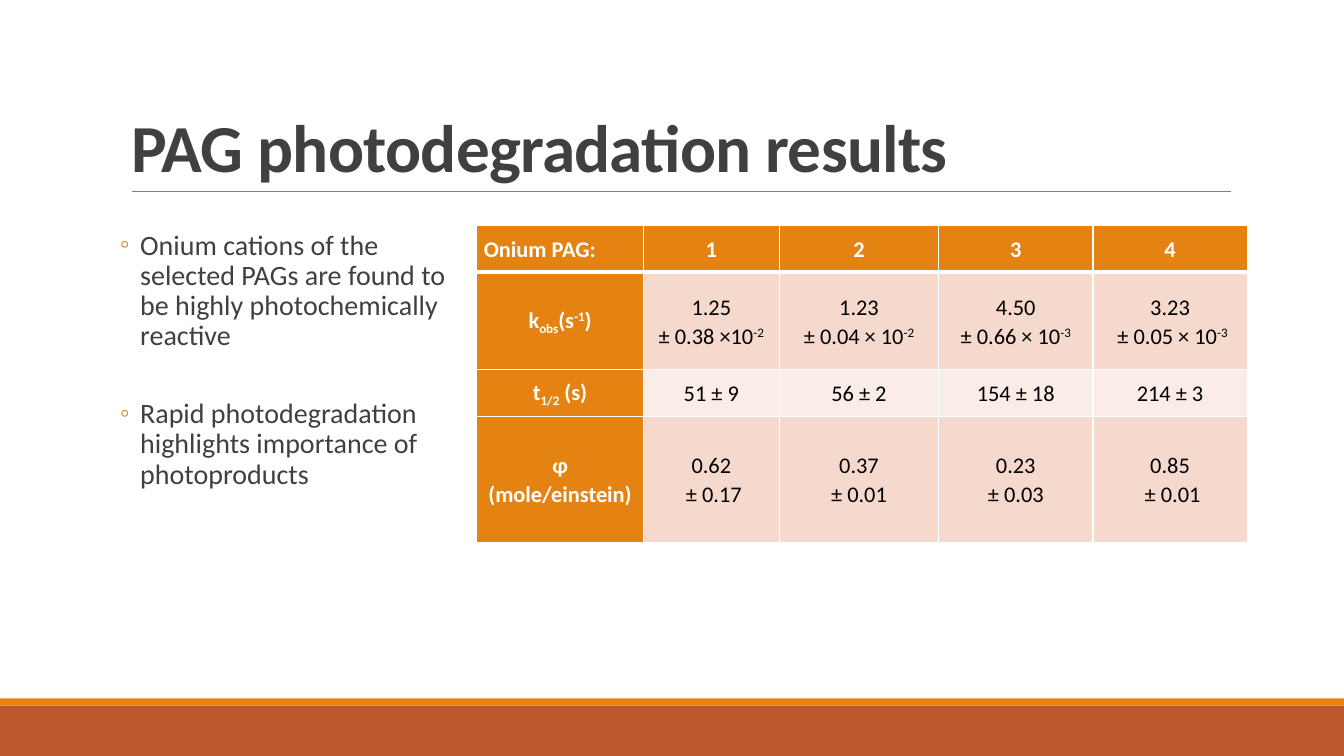
"""Builds the slide of PAG photodegradation results."""
from dataclasses import dataclass

from lxml import etree
from pptx import Presentation
from pptx import util as u
from pptx.dml.color import RGBColor
from pptx.enum import shapes, text
from pptx.oxml.ns import qn


@dataclass(frozen=True)
class Theme:
    font: str = "Calibri"
    title_size: int = 48
    body_size: int = 20
    table_size: int = 16
    ink: str = "404040"
    black: str = "000000"
    white: str = "FFFFFF"
    orange: str = "E48312"
    rust: str = "BD582C"
    rule: str = "808080"
    bands: tuple[str, str] = ("F5D9CC", "FAEDE7")


@dataclass(frozen=True)
class Band:
    top: float
    height: float
    color: str


@dataclass(frozen=True)
class Row:
    height: float
    cells: tuple[str, ...]


T = Theme()
BASELINES = {"_": "-25000", "^": "30000"}
FOOTER = (Band(7, 0.5, T.rust), Band(6.93, 0.07, T.orange))
BULLETS = (
    "Onium cations of the selected PAGs are found to be highly photochemically reactive",
    "Rapid photodegradation highlights importance of photoproducts",
)
COLUMNS = (1.65, 1.35, 1.58, 1.53, 1.53)
ROWS = (
    Row(0.46, ("Onium PAG:", "1", "2", "3", "4")),
    Row(0.97, ("k|_obs|(s|^-1|)", "1.25\n± 0.38 ×10|^-2", "1.23\n± 0.04 × 10|^-2",
               "4.50\n± 0.66 × 10|^-3", "3.23\n ± 0.05 × 10|^-3")),
    Row(0.46, ("t|_1/2| (s)", "51 ± 9", "56 ± 2", "154 ± 18", "214 ± 3")),
    Row(1.25, ("ɸ (mole/einstein)", "0.62\n ± 0.17", "0.37\n± 0.01",
               "0.23\n± 0.03", "0.85\n ± 0.01")),
)


def rgb(color: str) -> RGBColor:
    return RGBColor.from_string(color)


def style(p, size: int, color: str, bold: bool = False) -> None:
    f = p.font
    f.name, f.size, f.bold = T.font, u.Pt(size), bold
    f.color.rgb = rgb(color)


def place(sp, left: float, top: float, width: float, height: float) -> None:
    sp.left, sp.top = u.Inches(left), u.Inches(top)
    sp.width, sp.height = u.Inches(width), u.Inches(height)


def add_band(s, band: Band, width: int) -> None:
    sp = s.shapes.add_shape(shapes.MSO_SHAPE.RECTANGLE, 0, u.Inches(band.top),
                            width, u.Inches(band.height))
    sp.shadow.inherit = False
    sp.fill.solid()
    sp.fill.fore_color.rgb = rgb(band.color)
    sp.line.fill.background()


def add_rule(s) -> None:
    y = u.Inches(1.9)
    ln = s.shapes.add_connector(shapes.MSO_CONNECTOR.STRAIGHT, u.Inches(1.31), y,
                                u.Inches(12.21), y)
    ln.line.color.rgb = rgb(T.rule)
    ln.line.width = u.Pt(0.5)
    etree.SubElement(ln._element.spPr, qn("a:effectLst"))


def fill_title(sp) -> None:
    place(sp, 1.2, 0.31, 11, 1.59)
    tf = sp.text_frame
    tf.auto_size = text.MSO_AUTO_SIZE.NONE
    tf.vertical_anchor = text.MSO_ANCHOR.BOTTOM
    p = tf.paragraphs[0]
    p.alignment, p.line_spacing = text.PP_ALIGN.LEFT, 0.85
    style(p, T.title_size, T.ink, True)
    r = p.add_run()
    r.text = "PAG photodegradation results"
    r.font._element.set("spc", "-50")


def fill_body(sp) -> None:
    place(sp, 0.97, 2.24, 3.68, 4.4)
    tf = sp.text_frame
    tf.auto_size = text.MSO_AUTO_SIZE.NONE
    tf.margin_left = tf.margin_right = 0
    for i, line in enumerate(BULLETS):
        p = tf.add_paragraph() if i else tf.paragraphs[0]
        p.text, p.level, p.line_spacing = line, 1, 0.9
        p.space_before, p.space_after = u.Pt(30 if i else 2), u.Pt(4)
        style(p, T.body_size, T.ink)
        pPr = p._p.get_or_add_pPr()
        pPr.set("marL", str(u.Inches(0.42)))
        pPr.set("indent", str(u.Inches(-0.2)))
        bu_clr = etree.Element(qn("a:buClr"))
        etree.SubElement(bu_clr, qn("a:srgbClr"), val=T.orange)
        bu_char = etree.Element(qn("a:buChar"), char="◦")
        pPr.find(qn("a:defRPr")).addprevious(bu_clr)
        bu_clr.addnext(bu_char)


def add_borders(cell, top: float, bottom: float) -> None:
    tcPr = cell._tc.get_or_add_tcPr()
    widths = {"L": 1, "R": 1, "T": top, "B": bottom}
    for i, (side, width) in enumerate(widths.items()):
        ln = etree.Element(qn(f"a:ln{side}"), w=str(u.Pt(width)))
        fill = etree.SubElement(ln, qn("a:solidFill"))
        etree.SubElement(fill, qn("a:srgbClr"), val=T.white)
        tcPr.insert(i, ln)


def fill_cell(cell, content: str, row: int, col: int) -> None:
    heading = row == 0 or col == 0
    cell.vertical_anchor = text.MSO_ANCHOR.MIDDLE
    cell.margin_left = cell.margin_right = u.Inches(0.07)
    cell.margin_top = cell.margin_bottom = 0
    cell.fill.solid()
    cell.fill.fore_color.rgb = rgb(T.orange if heading else T.bands[(row - 1) % 2])
    add_borders(cell, 3 if row == 1 else 1, 3 if row == 0 else 1)
    tf = cell.text_frame
    for i, line in enumerate(content.split("\n")):
        p = tf.add_paragraph() if i else tf.paragraphs[0]
        p.alignment = text.PP_ALIGN.CENTER if row or col else text.PP_ALIGN.LEFT
        p.line_spacing = 1.07
        style(p, T.table_size, T.white if heading else T.black, heading)
        for part in line.split("|"):
            r = p.add_run()
            r.text = part.lstrip("_^")
            if part[0] in BASELINES:
                r.font._element.set("baseline", BASELINES[part[0]])


def add_results(s) -> None:
    table = s.shapes.add_table(len(ROWS), len(COLUMNS), u.Inches(4.73), u.Inches(2.24),
                               u.Inches(sum(COLUMNS)),
                               u.Inches(sum(row.height for row in ROWS))).table
    table.horz_banding = False
    for col, width in enumerate(COLUMNS):
        table.columns[col].width = u.Inches(width)
    for i, row in enumerate(ROWS):
        table.rows[i].height = u.Inches(row.height)
        for j, content in enumerate(row.cells):
            fill_cell(table.cell(i, j), content, i, j)


def main() -> None:
    prs = Presentation()
    prs.slide_width, prs.slide_height = u.Inches(13.33), u.Inches(7.5)
    s = prs.slides.add_slide(prs.slide_layouts[1])
    for band in FOOTER:
        add_band(s, band, prs.slide_width)
    add_rule(s)
    fill_title(s.shapes.title)
    fill_body(s.placeholders[1])
    add_results(s)
    prs.save("out.pptx")


if __name__ == "__main__":
    main()
